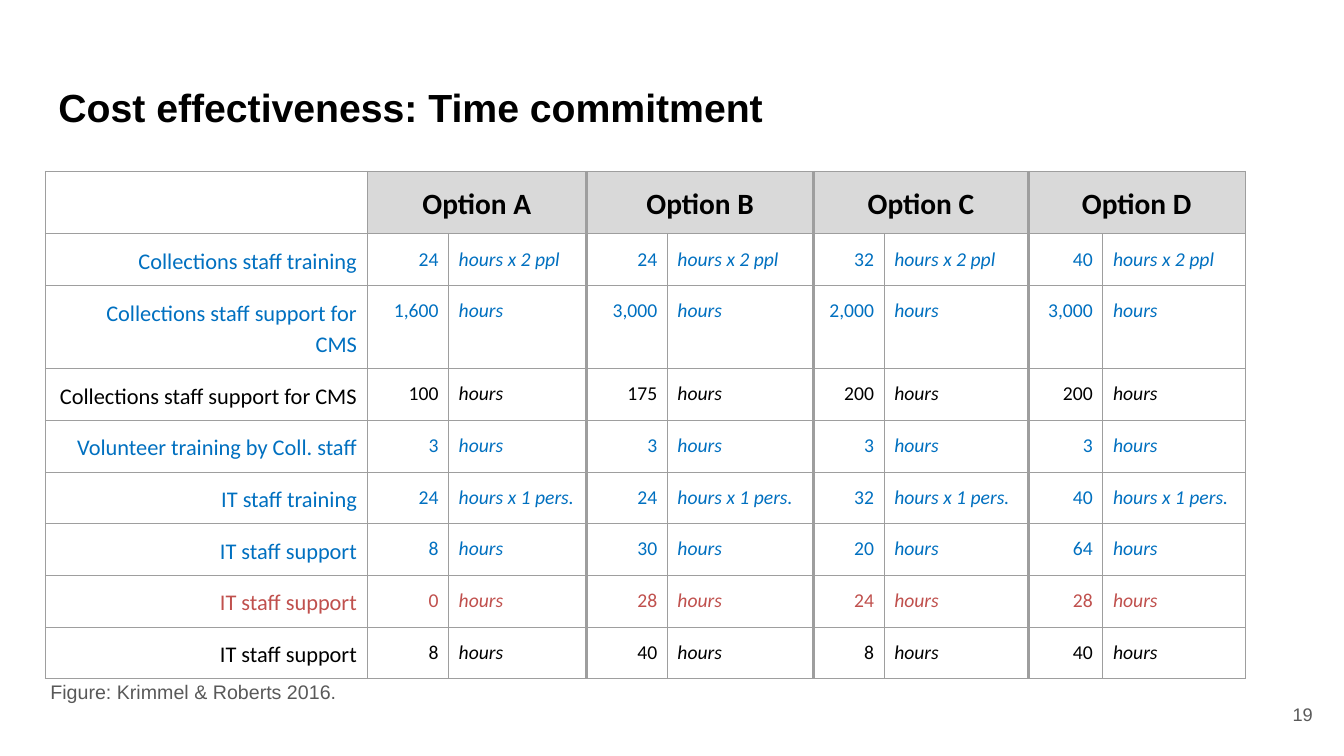
"""Builds a slide with a table of staff hours for four options."""
from lxml import etree
from pptx import Presentation
from pptx.dml.color import RGBColor
from pptx.enum.text import MSO_ANCHOR, PP_ALIGN
from pptx.oxml.ns import qn
from pptx.util import Pt

PX = 9144
LEFT, CENTER, RIGHT = PP_ALIGN.LEFT, PP_ALIGN.CENTER, PP_ALIGN.RIGHT
MIDDLE = MSO_ANCHOR.MIDDLE
BLACK = RGBColor(0x00, 0x00, 0x00)
BLUE = RGBColor(0x00, 0x70, 0xC0)
RED = RGBColor(0xC0, 0x50, 0x4D)
DARK_GRAY = RGBColor(0x59, 0x59, 0x59)
LIGHT_GRAY = RGBColor(0xD9, 0xD9, 0xD9)
BORDER_GRAY = RGBColor(0x9E, 0x9E, 0x9E)
THIN, THICK = Pt(0.75), Pt(2.25)

OPTIONS = ["Option A", "Option B", "Option C", "Option D"]
TASKS = [
    ("Collections staff training", BLUE, "hours x 2 ppl", ["24", "24", "32", "40"]),
    (" Collections staff support for CMS", BLUE, "hours", ["1,600", "3,000", "2,000", "3,000"]),
    ("Collections staff support for CMS", BLACK, "hours", ["100", "175", "200", "200"]),
    ("Volunteer training by Coll. staff", BLUE, "hours", ["3", "3", "3", "3"]),
    ("IT staff training", BLUE, "hours x 1 pers.", ["24", "24", "32", "40"]),
    ("IT staff support", BLUE, "hours", ["8", "30", "20", "64"]),
    ("IT staff support", RED, "hours", ["0", "28", "24", "28"]),
    ("IT staff support", BLACK, "hours", ["8", "40", "8", "40"]),
]
COLUMN_WIDTHS = [319, 81, 137, 80, 145, 70, 143, 74, 141]
ROW_HEIGHTS = [62, 51, 82] + [51] * 6


def write(frame, text, font_name, size, color, align=LEFT, bold=False, italic=False):
    frame.text = text
    paragraph = frame.paragraphs[0]
    paragraph.alignment = align
    font = paragraph.runs[0].font
    font.name, font.size, font.bold, font.italic = font_name, Pt(size), bold, italic
    font.color.rgb = color
    return paragraph


def add_borders(cell, left, right):
    properties = cell._tc.get_or_add_tcPr()
    edges = [("a:lnL", left), ("a:lnR", right), ("a:lnT", THIN), ("a:lnB", THIN)]
    for position, (tag, width) in enumerate(edges):
        line = etree.Element(qn(tag), w=str(width))
        fill = etree.SubElement(line, qn("a:solidFill"))
        etree.SubElement(fill, qn("a:srgbClr"), val=str(BORDER_GRAY))
        properties.insert(position, line)


prs = Presentation()
prs.slide_width, prs.slide_height = 1333 * PX, 750 * PX
slide = prs.slides.add_slide(prs.slide_layouts[6])

hours_table = slide.shapes.add_table(
    len(ROW_HEIGHTS), len(COLUMN_WIDTHS), 45 * PX, 170 * PX,
    sum(COLUMN_WIDTHS) * PX, sum(ROW_HEIGHTS) * PX).table
hours_table.first_row = False
hours_table.horz_banding = False
for column, width in zip(hours_table.columns, COLUMN_WIDTHS):
    column.width = width * PX
for row, height in zip(hours_table.rows, ROW_HEIGHTS):
    row.height = height * PX

for r in range(len(ROW_HEIGHTS)):
    for c in range(len(COLUMN_WIDTHS)):
        cell = hours_table.cell(r, c)
        cell.margin_left = cell.margin_right = 10 * PX
        cell.margin_top = cell.margin_bottom = 10 * PX
        if r == 0 and c > 0:
            cell.fill.solid()
            cell.fill.fore_color.rgb = LIGHT_GRAY
        else:
            cell.fill.background()
        left = THICK if c in (3, 5, 7) else THIN
        right = THICK if c in (2, 4, 6) or (r == 0 and c in (1, 3, 5)) else THIN
        add_borders(cell, left, right)

for i, option in enumerate(OPTIONS):
    header = hours_table.cell(0, 1 + 2 * i)
    header.merge(hours_table.cell(0, 2 + 2 * i))
    write(header.text_frame, option, "Calibri", 21, BLACK, CENTER, bold=True).line_spacing = 1.15

for r, (task, color, unit, amounts) in enumerate(TASKS, start=1):
    entries = [(task, 16, RIGHT, False)]
    for amount in amounts:
        entries += [(amount, 14, RIGHT, False), (unit, 14, LEFT, True)]
    for c, (text, size, align, italic) in enumerate(entries):
        frame = hours_table.cell(r, c).text_frame
        write(frame, text, "Calibri", size, color, align, italic=italic).line_spacing = 1.15

captions = [
    ("19", (1235, 680, 80, 57), 13, DARK_GRAY, RIGHT, False),
    ("Cost effectiveness: Time commitment", (45, 65, 964, 81), 28, BLACK, LEFT, True),
    ("Figure: Krimmel & Roberts 2016.", (37, 663, 1164, 42), 14, DARK_GRAY, LEFT, False),
]
for text, box, size, color, align, bold in captions:
    frame = slide.shapes.add_textbox(*[length * PX for length in box]).text_frame
    frame.word_wrap = True
    frame.vertical_anchor = MIDDLE
    frame.margin_left = frame.margin_right = 13 * PX
    frame.margin_top = frame.margin_bottom = 13 * PX
    paragraph = write(frame, text, "Arial", size, color, align, bold)
paragraph.line_spacing = 1.15
paragraph.space_after = Pt(16)

prs.save("out.pptx")
